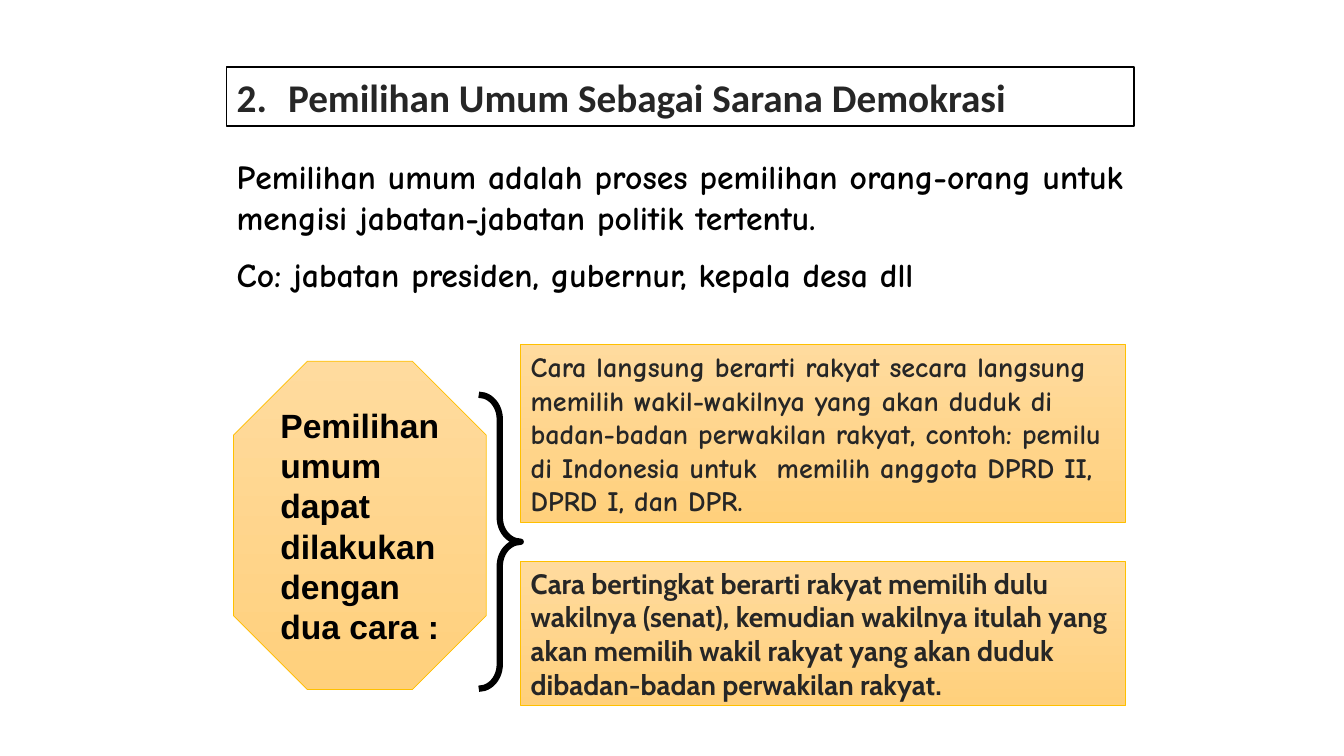
from lxml import etree
from pptx import Presentation
from pptx.dml.color import RGBColor
from pptx.enum.shapes import MSO_SHAPE
from pptx.enum.text import MSO_ANCHOR, MSO_AUTO_SIZE, PP_ALIGN
from pptx.oxml.ns import qn
from pptx.util import Inches, Pt

RECTANGLE = MSO_SHAPE.RECTANGLE
OCTAGON = MSO_SHAPE.OCTAGON
RIGHT_BRACE = MSO_SHAPE.RIGHT_BRACE
MIDDLE = MSO_ANCHOR.MIDDLE
TOP = MSO_ANCHOR.TOP
GROW = MSO_AUTO_SIZE.SHAPE_TO_FIT_TEXT
LEFT = PP_ALIGN.LEFT

BLACK = RGBColor(0x00, 0x00, 0x00)
WHITE = RGBColor(0xFF, 0xFF, 0xFF)
CHARCOAL = RGBColor(0x26, 0x26, 0x26)
GOLD = RGBColor(0xFF, 0xC0, 0x00)
PALE_ORANGE = RGBColor(0xFF, 0xDB, 0x9E)
DEEP_ORANGE = RGBColor(0xFF, 0xD0, 0x7C)

# The slide is a grid of 160 columns by 90 rows
SLIDE_WIDTH, SLIDE_HEIGHT = Inches(13.33), Inches(7.5)
COLUMNS, ROWS = 160, 90
METHOD_COLUMN, METHOD_WIDTH = 62, 72


def place(column, row, width, height):
    """Turn grid columns and rows into slide lengths."""
    return (round(SLIDE_WIDTH * column / COLUMNS), round(SLIDE_HEIGHT * row / ROWS),
            round(SLIDE_WIDTH * width / COLUMNS), round(SLIDE_HEIGHT * height / ROWS))


def write(shape, texts, font_name, size, color, anchor=MIDDLE):
    """Fill a shape with bold, left-aligned paragraphs."""
    frame = shape.text_frame
    frame.word_wrap = True
    frame.auto_size = GROW
    frame.vertical_anchor = anchor
    for index, text in enumerate(texts):
        paragraph = frame.add_paragraph() if index else frame.paragraphs[0]
        paragraph.text = text
        paragraph.alignment = LEFT
        if index:
            paragraph.space_before = Pt(size / 2)
        font = paragraph.font
        font.name, font.size, font.bold = font_name, Pt(size), True
        font.color.rgb = color


def number_paragraph(paragraph, start):
    """Number a paragraph automatically with a hanging indent."""
    properties = paragraph._p.get_or_add_pPr()
    properties.set("marL", str(Inches(0.51)))
    properties.set("indent", str(-Inches(0.51)))
    number = etree.Element(qn("a:buAutoNum"), type="arabicPeriod", startAt=str(start))
    properties.insert(0, number)


def add_outlined(slide, kind, area, line_color, line_width):
    shape = slide.shapes.add_shape(kind, *place(*area))
    shape.shadow.inherit = False
    shape.line.color.rgb = line_color
    shape.line.width = Pt(line_width)
    return shape


def add_heading(slide, text, number, area):
    shape = add_outlined(slide, RECTANGLE, area, BLACK, 1)
    shape.fill.solid()
    shape.fill.fore_color.rgb = WHITE
    number_paragraph(shape.text_frame.paragraphs[0], number)
    write(shape, [text], "Calibri", 28, CHARCOAL)


def add_definition(slide, texts, area):
    box = slide.shapes.add_textbox(*place(*area))
    write(box, texts, "Comic Neue", 24, BLACK, TOP)


def add_orange_panel(slide, kind, area, text, font_name, size, color):
    shape = add_outlined(slide, kind, area, GOLD, 0.5)
    shape.fill.gradient()
    shape.fill.gradient_angle = 270
    for stop, stop_color in zip(shape.fill.gradient_stops, (PALE_ORANGE, DEEP_ORANGE)):
        stop.color.rgb = stop_color
    write(shape, [text], font_name, size, color)
    return shape


def add_brace(slide, area):
    brace = add_outlined(slide, RIGHT_BRACE, area, BLACK, 4.5)
    brace.fill.background()
    brace.adjustments[0] = 0.58


def main():
    presentation = Presentation()
    presentation.slide_width, presentation.slide_height = SLIDE_WIDTH, SLIDE_HEIGHT
    slide = presentation.slides.add_slide(presentation.slide_layouts[6])

    # Heading and definition
    add_heading(slide, "Pemilihan Umum Sebagai Sarana Demokrasi", 2, (27, 8, 108, 7))
    add_definition(slide, [
        "Pemilihan umum adalah proses pemilihan orang-orang untuk mengisi "
        "jabatan-jabatan politik tertentu.",
        "Co: jabatan presiden, gubernur, kepala desa dll",
    ], (27, 18, 108, 18.1))

    # Two ways of holding an election
    methods = [
        (41, 21.2, "Comic Neue",
         "Cara langsung berarti rakyat secara langsung memilih wakil-wakilnya yang "
         "akan duduk di badan-badan perwakilan rakyat, contoh: pemilu di Indonesia "
         "untuk  memilih anggota DPRD II, DPRD I, dan DPR."),
        (66.8, 17.2, "Cabin",
         "Cara bertingkat berarti rakyat memilih dulu wakilnya (senat), kemudian "
         "wakilnya itulah yang akan memilih wakil rakyat yang akan duduk "
         "dibadan-badan perwakilan rakyat."),
    ]
    for row, height, font_name, text in methods:
        add_orange_panel(slide, RECTANGLE, (METHOD_COLUMN, row, METHOD_WIDTH, height),
                         text, font_name, 20, CHARCOAL)

    # Topic and the brace that links it to both ways
    add_orange_panel(slide, OCTAGON, (27.8, 43, 30.1, 39.1),
                     "Pemilihan umum dapat dilakukan dengan dua cara :",
                     "Arial", 24, BLACK)
    add_brace(slide, (57, 47, 5, 35))

    presentation.save("out.pptx")


if __name__ == "__main__":
    main()
